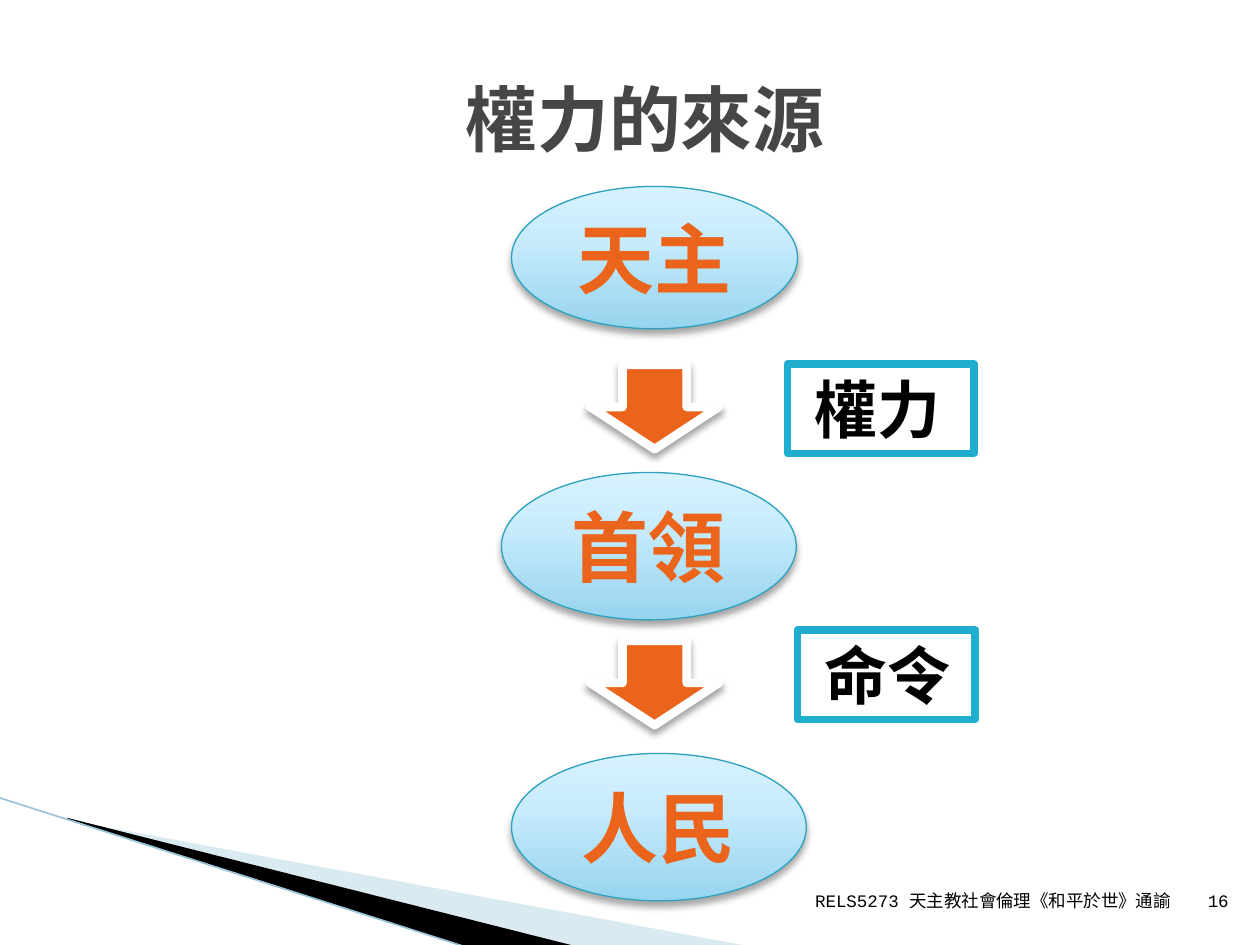
from lxml.etree import SubElement
from pptx import Presentation
from pptx.dml.color import RGBColor
from pptx.enum.shapes import MSO_CONNECTOR, MSO_SHAPE
from pptx.enum.text import MSO_ANCHOR, MSO_AUTO_SIZE, PP_ALIGN
from pptx.oxml import parse_xml
from pptx.oxml.ns import nsdecls, qn
from pptx.util import Inches, Pt

COLORS = {
    "title": "464646", "orange": "EB641B", "black": "000000", "white": "FFFFFF",
    "oval_line": "2DA2BF", "label_line": "1FAECD",
    "pale_wedge": "A0CBDC", "wedge_line": "97C5D8",
    "oval_low": "96D4EE", "oval_mid": "C9ECFC", "oval_high": "D7F2FF",
}
COLOR = {name: RGBColor.from_string(value) for name, value in COLORS.items()}


def write(shape, text, size, color, align, anchor, bold=False):
    frame = shape.text_frame
    frame.word_wrap = True
    frame.vertical_anchor = anchor
    para = frame.paragraphs[0]
    para.text = text
    para.alignment = align
    font = para.font
    font.name, font.size, font.bold = "Courier New", Pt(size), bold
    font.color.rgb = COLOR[color]


def add_shadow(shape):
    shape.shadow.inherit = False
    effects = shape._element.spPr.find(qn("a:effectLst"))
    effects.append(parse_xml(
        f'<a:outerShdw {nsdecls("a")} blurRad="{Pt(4)}" dist="{Pt(3)}" dir="5400000" '
        f'rotWithShape="0"><a:srgbClr val="{COLORS["black"]}"><a:alpha val="35000"/>'
        '</a:srgbClr></a:outerShdw>'))


deck = Presentation()
deck.slide_width, deck.slide_height = Inches(10), Inches(7.5)
page = deck.slides.add_slide(deck.slide_layouts[6])
shapes = page.shapes

# Corner wedges
wedges = [
    ("pale_wedge", [(0.55, 6.51), (5.95, 7.51), (4.56, 7.51), (0.55, 6.5)]),
    ("black", [(0.53, 6.49), (4.57, 7.51), (3.72, 7.52), (0.54, 6.5)]),
]
for color, points in wedges:
    corners = [(Inches(x), Inches(y)) for x, y in points]
    builder = shapes.build_freeform(*corners[0])
    builder.add_line_segments(corners[1:], close=True)
    wedge = builder.convert_to_shape()
    wedge.shadow.inherit = False
    wedge.fill.solid()
    wedge.fill.fore_color.rgb = COLOR[color]
    wedge.line.fill.background()
    if color == "pale_wedge":
        tint = wedge._element.spPr.find(qn("a:solidFill"))[0]
        SubElement(tint, qn("a:alpha")).set("val", "40000")

edge = shapes.add_connector(MSO_CONNECTOR.STRAIGHT, Inches(-0.01), Inches(6.33),
                            Inches(3.71), Inches(7.52))
edge.line.color.rgb = COLOR["wedge_line"]
edge.line.width = Pt(0.95)
SubElement(edge._element.spPr, qn("a:effectLst"))

# Title
title = shapes.add_textbox(Inches(0.62), Inches(0.31), Inches(9), Inches(1.25))
write(title, "權力的來源", 41, "title", PP_ALIGN.CENTER, MSO_ANCHOR.MIDDLE, bold=True)

# Chain of authority
stops = "".join(
    f'<a:gs pos="{place * 1000}"><a:srgbClr val="{COLORS[name]}"/></a:gs>'
    for place, name in [(0, "oval_low"), (65, "oval_mid"), (100, "oval_high")])
ovals = [
    ("首領", 3.98, 3.75, 2.34, 1.17),
    ("天主", 4.06, 1.48, 2.27, 1.13),
    ("人民", 4.06, 5.98, 2.34, 1.17),
]
for text, *place in ovals:
    oval = shapes.add_shape(MSO_SHAPE.OVAL, *map(Inches, place))
    oval.line.color.rgb = COLOR["oval_line"]
    oval.line.width = Pt(0.75)
    oval._element.spPr.find(qn("a:prstGeom")).addnext(parse_xml(
        f'<a:gradFill {nsdecls("a")} rotWithShape="1"><a:gsLst>{stops}</a:gsLst>'
        '<a:lin ang="16200000" scaled="0"/></a:gradFill>'))
    add_shadow(oval)
    write(oval, text, 44, "orange", PP_ALIGN.CENTER, MSO_ANCHOR.MIDDLE, bold=True)

# Arrows between the ovals
for top in (2.72, 4.91):
    arrow = shapes.add_shape(MSO_SHAPE.RIGHT_ARROW, Inches(4.86), Inches(top),
                             Inches(0.67), Inches(1.02))
    arrow.rotation = 90
    arrow.fill.solid()
    arrow.fill.fore_color.rgb = COLOR["orange"]
    arrow.line.color.rgb = COLOR["white"]
    arrow.line.width = Pt(5)
    add_shadow(arrow)

# Labels beside the arrows
for text, left, top, width in [(" 命令", 6.33, 5, 1.41), (" 權力", 6.25, 2.89, 1.48)]:
    label = shapes.add_shape(MSO_SHAPE.RECTANGLE, Inches(left), Inches(top),
                             Inches(width), Inches(0.71))
    label.shadow.inherit = False
    label.fill.solid()
    label.fill.fore_color.rgb = COLOR["white"]
    label.line.color.rgb = COLOR["label_line"]
    label.line.width = Pt(4.33)
    write(label, text, 36, "black", PP_ALIGN.LEFT, MSO_ANCHOR.TOP, bold=True)
    label.text_frame.auto_size = MSO_AUTO_SIZE.SHAPE_TO_FIT_TEXT

# Footer and page number
footers = [("RELS5273 天主教社會倫理《和平於世》通諭", 6.25, 3.14), ("16", 9.45, 0.4)]
for text, left, width in footers:
    footer = shapes.add_textbox(Inches(left), Inches(6.88), Inches(width), Inches(0.4))
    write(footer, text, 10, "black", PP_ALIGN.RIGHT, MSO_ANCHOR.BOTTOM)

deck.save("out.pptx")
